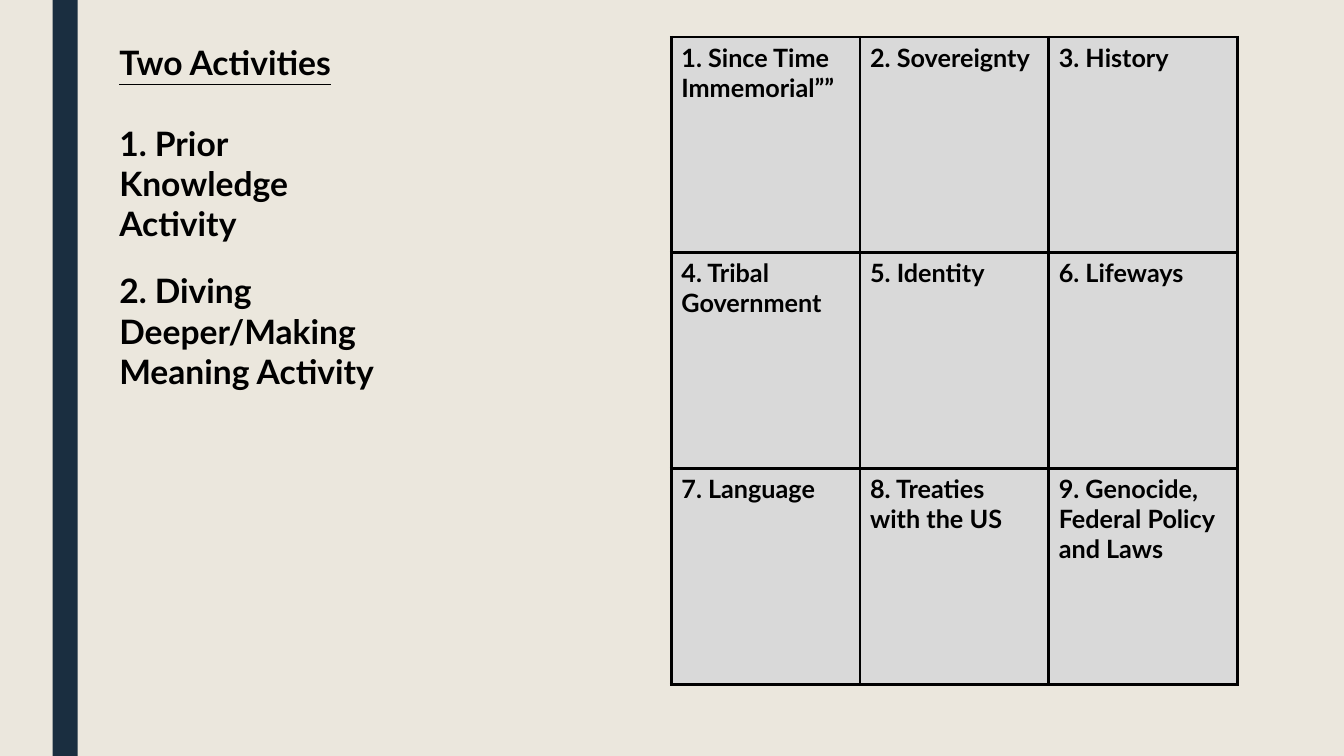
from dataclasses import dataclass

import pptx
import pptx.dml.color
import pptx.enum.shapes
import pptx.enum.text
import pptx.oxml
import pptx.oxml.ns
import pptx.util

Pt = pptx.util.Pt

COLOURS = {
    "background": "EBE7DD",
    "stripe": "1A2E40",
    "cell": "D9D9D9",
    "ink": "000000",
}
FONT = "Lato"
GRID_SIZE = 3
BORDER_WIDTH = 2.25


@dataclass(frozen=True)
class Frame:
    left: float
    top: float
    width: float
    height: float

    def lengths(self) -> tuple:
        return Pt(self.left), Pt(self.top), Pt(self.width), Pt(self.height)


@dataclass(frozen=True)
class Activity:
    text: str
    space_before: float


STRIPE = Frame(37.5, 0, 18, 540)
TITLE = Frame(78, 26.5, 218, 36)
ACTIVITY_LIST = Frame(78, 84, 218, 172)
TOPIC_GRID = Frame(479.5, 26.5, 404.4, 462.3)

ACTIVITIES = [
    Activity("1. Prior Knowledge Activity", 0),
    Activity("2. Diving Deeper/Making Meaning Activity", 19),
]
TOPICS = [
    "1. Since Time Immemorial””",
    "2. Sovereignty",
    "3. History",
    "4. Tribal Government",
    "5. Identity",
    "6. Lifeways",
    "7. Language",
    "8. Treaties with the US",
    "9. Genocide, Federal Policy and Laws",
]


def colour(name: str) -> pptx.dml.color.RGBColor:
    return pptx.dml.color.RGBColor.from_string(COLOURS[name])


def add_bold_run(para, text: str, size: float, underline: bool = False) -> None:
    span = para.add_run()
    span.text = text
    span.font.name = FONT
    span.font.size = Pt(size)
    span.font.bold = True
    span.font.underline = underline
    span.font.color.rgb = colour("ink")


def place_text_box(box, frame: Frame) -> None:
    """Move a placeholder and anchor its text at the top, without shrinking."""
    box.left, box.top, box.width, box.height = frame.lengths()
    box.text_frame.word_wrap = True
    box.text_frame.auto_size = pptx.enum.text.MSO_AUTO_SIZE.NONE
    box.text_frame.vertical_anchor = pptx.enum.text.MSO_ANCHOR.TOP


def add_stripe(page) -> None:
    stripe = page.shapes.add_shape(
        pptx.enum.shapes.MSO_SHAPE.RECTANGLE, *STRIPE.lengths()
    )
    stripe.shadow.inherit = False
    stripe.fill.solid()
    stripe.fill.fore_color.rgb = colour("stripe")
    stripe.line.fill.background()


def fill_title(page) -> None:
    box = page.shapes.title
    place_text_box(box, TITLE)
    para = box.text_frame.paragraphs[0]
    para.alignment = pptx.enum.text.PP_ALIGN.LEFT
    add_bold_run(para, "Two Activities", 24, underline=True)


def fill_activities(page) -> None:
    box = page.placeholders[1]
    place_text_box(box, ACTIVITY_LIST)
    for index, activity in enumerate(ACTIVITIES):
        text_frame = box.text_frame
        para = text_frame.add_paragraph() if index else text_frame.paragraphs[0]
        properties = para._p.get_or_add_pPr()
        properties.set("marL", "0")
        properties.set("indent", "0")
        pptx.oxml.ns.qn("a:buNone")
        properties.append(
            pptx.oxml.parse_xml(f'<a:buNone {pptx.oxml.ns.nsdecls("a")}/>')
        )
        para.space_before = Pt(activity.space_before)
        add_bold_run(para, activity.text, 24)


def add_cell_borders(cell) -> None:
    properties = cell._tc.get_or_add_tcPr()
    for side in ("lnL", "lnR", "lnT", "lnB"):
        properties.append(
            pptx.oxml.parse_xml(
                f'<a:{side} {pptx.oxml.ns.nsdecls("a")} w="{Pt(BORDER_WIDTH)}">'
                f'<a:solidFill><a:srgbClr val="{COLOURS["ink"]}"/></a:solidFill>'
                f"</a:{side}>"
            )
        )


def add_topic_grid(page) -> None:
    table = page.shapes.add_table(
        GRID_SIZE, GRID_SIZE, *TOPIC_GRID.lengths()
    ).table
    table.first_row = False
    table.horz_banding = False
    for column in table.columns:
        column.width = Pt(TOPIC_GRID.width / GRID_SIZE)
    for row in table.rows:
        row.height = Pt(TOPIC_GRID.height / GRID_SIZE)
    for cell, topic in zip(table.iter_cells(), TOPICS):
        add_cell_borders(cell)
        cell.fill.solid()
        cell.fill.fore_color.rgb = colour("cell")
        add_bold_run(cell.text_frame.paragraphs[0], topic, 18)


def main() -> None:
    deck = pptx.Presentation()
    deck.slide_width, deck.slide_height = Pt(960), Pt(540)
    page = deck.slides.add_slide(deck.slide_layouts[1])
    page.background.fill.solid()
    page.background.fill.fore_color.rgb = colour("background")
    add_stripe(page)
    fill_title(page)
    fill_activities(page)
    add_topic_grid(page)
    deck.save("out.pptx")


if __name__ == "__main__":
    main()
